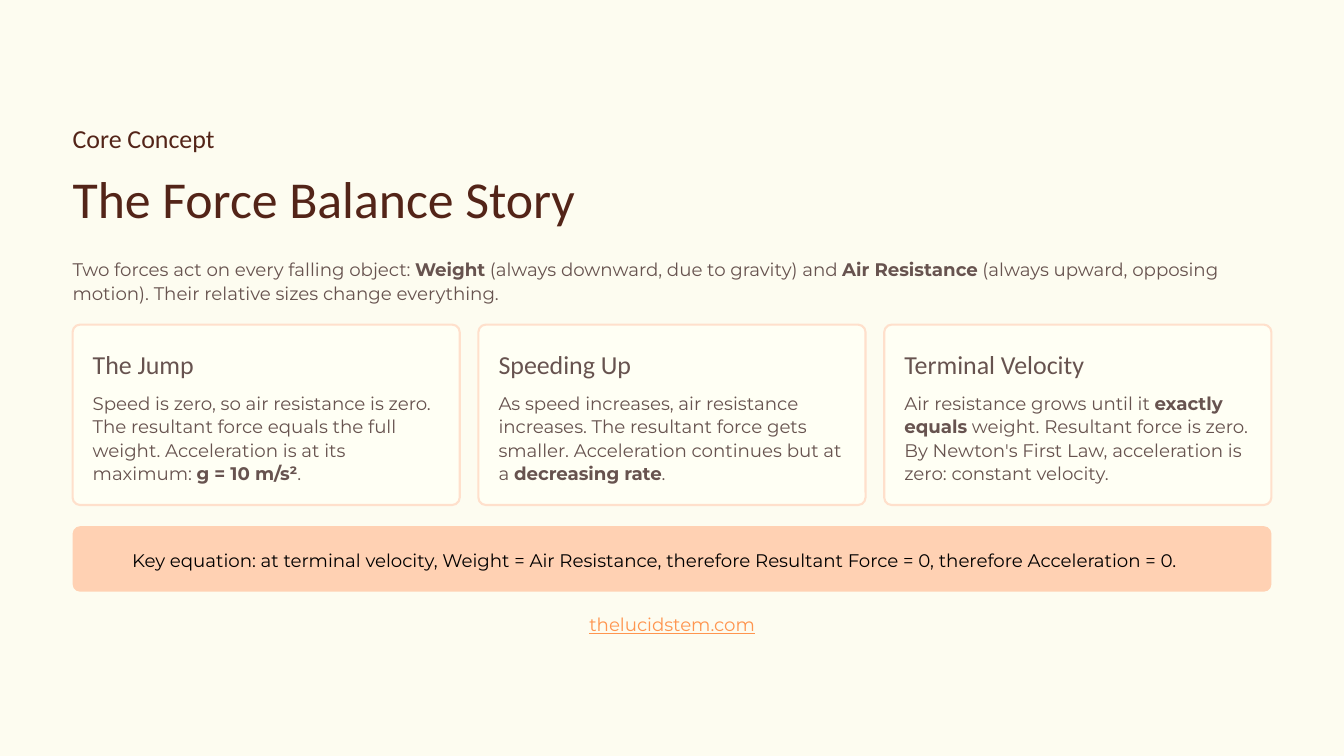
import pptx
import pptx.dml.color
import pptx.enum.shapes
import pptx.enum.text
import pptx.util
from dataclasses import dataclass

Inches = pptx.util.Inches


@dataclass(frozen=True)
class Theme:
    page: str = "FDFCF0"
    card: str = "FFFFF4"
    card_line: str = "FFE0CC"
    banner: str = "FFD1B3"
    title: str = "532418"
    body: str = "67534F"
    key: str = "000000"
    link: str = "FF954F"
    heading_font: str = "Calibri"
    body_font: str = "Montserrat"
    title_size: float = 37
    heading_size: float = 18.5
    body_size: float = 13
    line_spacing: float = 1.08
    corner: float = 0.075


THEME = Theme()
MARGIN, CONTENT_W = 0.72, 11.89
CARD_GAP = 0.185

INTRO = [
    ("Two forces act on every falling object: ", False),
    ("Weight", True),
    (" (always downward, due to gravity) and ", False),
    ("Air Resistance", True),
    (" (always upward, opposing motion). Their relative sizes change everything.", False),
]
CARDS = [
    ("The Jump", [
        ("Speed is zero, so air resistance is zero. The resultant force equals "
         "the full weight. Acceleration is at its maximum: ", False),
        ("g = 10 m/s²", True),
        (".", False)]),
    ("Speeding Up", [
        ("As speed increases, air resistance increases. The resultant force gets "
         "smaller. Acceleration continues but at a ", False),
        ("decreasing rate", True),
        (".", False)]),
    ("Terminal Velocity", [
        ("Air resistance grows until it ", False),
        ("exactly equals", True),
        (" weight. Resultant force is zero. By Newton's First Law, acceleration "
         "is zero: constant velocity.", False)]),
]
KEY_EQUATION = ("Key equation: at terminal velocity, Weight = Air Resistance, "
                "therefore Resultant Force = 0, therefore Acceleration = 0.")


def rgb(color):
    return pptx.dml.color.RGBColor.from_string(color)


def add_text(s, box, runs, font, size, color, centred=False, underline=None):
    """Place one paragraph of (text, bold) runs in a box without insets."""
    sp = s.shapes.add_textbox(*map(Inches, box))
    tf = sp.text_frame
    tf.word_wrap = True
    tf.margin_left = tf.margin_right = tf.margin_top = tf.margin_bottom = 0
    p = tf.paragraphs[0]
    p.line_spacing = THEME.line_spacing
    if centred:
        p.alignment = pptx.enum.text.PP_ALIGN.CENTER
    for text, bold in runs:
        r = p.add_run()
        r.text = text
        r.font.name = font
        r.font.size = pptx.util.Pt(size)
        r.font.bold = bold
        r.font.underline = underline
        r.font.color.rgb = rgb(color)


def add_heading(s, box, text, color, size=THEME.heading_size):
    add_text(s, box, [(text, False)], THEME.heading_font, size, color)


def add_body(s, box, runs, color=THEME.body, **style):
    add_text(s, box, runs, THEME.body_font, THEME.body_size, color, **style)


def add_panel(s, box, fill, line=None):
    """Draw a rounded panel whose corner radius does not depend on its size."""
    sp = s.shapes.add_shape(
        pptx.enum.shapes.MSO_SHAPE.ROUNDED_RECTANGLE, *map(Inches, box))
    sp.shadow.inherit = False
    sp.adjustments[0] = THEME.corner / min(box[2:])
    sp.fill.solid()
    sp.fill.fore_color.rgb = rgb(fill)
    if line:
        sp.line.color.rgb = rgb(line)
        sp.line.width = pptx.util.Pt(1.5)
    else:
        sp.line.fill.background()


def add_header(s, x, y, w):
    add_heading(s, (x, y, w, 0.34), "Core Concept", THEME.title)
    add_heading(s, (x, y + 0.41, w, 0.68), "The Force Balance Story",
                THEME.title, THEME.title_size)
    add_body(s, (x, y + 1.36, w, 0.47), INTRO)


def add_card(s, x, y, w, h, heading, runs):
    pad = 0.2
    add_panel(s, (x, y, w, h), THEME.card, THEME.card_line)
    add_heading(s, (x + pad, y + 0.21, w - 2 * pad, 0.34), heading, THEME.body)
    add_body(s, (x + pad, y + 0.65, w - 2 * pad, 0.94), runs)


def add_card_row(s, x, y, w, h):
    card_w = (w - CARD_GAP * (len(CARDS) - 1)) / len(CARDS)
    for i, (heading, runs) in enumerate(CARDS):
        add_card(s, x + i * (card_w + CARD_GAP), y, card_w, h, heading, runs)


def add_key_banner(s, x, y, w, h):
    indent = 0.59
    add_panel(s, (x, y, w, h), THEME.banner)
    add_body(s, (x + indent, y + 0.21, w - indent, 0.24),
             [(KEY_EQUATION, False)], THEME.key)


def add_footer(s, x, y, w):
    add_body(s, (x, y, w, 0.24), [("thelucidstem.com", False)], THEME.link,
             centred=True, underline=True)


def main():
    prs = pptx.Presentation()
    prs.slide_width, prs.slide_height = Inches(13.33), Inches(7.5)
    s = prs.slides.add_slide(prs.slide_layouts[6])
    s.background.fill.solid()
    s.background.fill.fore_color.rgb = rgb(THEME.page)
    add_header(s, MARGIN, 1.19, CONTENT_W)
    add_card_row(s, MARGIN, 3.22, CONTENT_W, 1.79)
    add_key_banner(s, MARGIN, 5.22, CONTENT_W, 0.65)
    add_footer(s, MARGIN, 6.07, CONTENT_W)
    prs.save("out.pptx")


if __name__ == "__main__":
    main()
